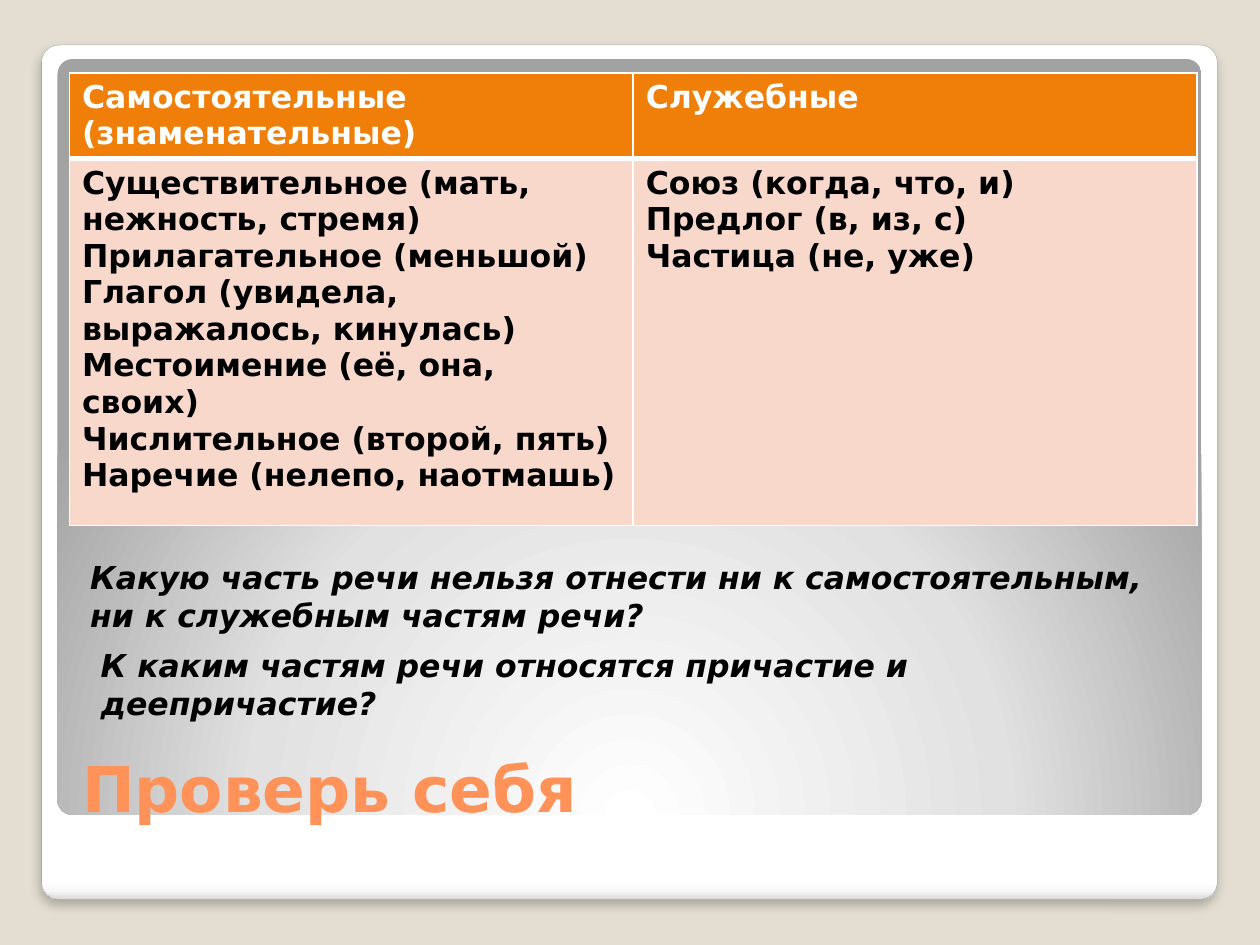
from dataclasses import dataclass

from lxml import etree
from pptx import Presentation
from pptx.dml.color import RGBColor
from pptx.enum.shapes import MSO_SHAPE
from pptx.enum.text import MSO_ANCHOR, MSO_AUTO_SIZE, PP_ALIGN
from pptx.oxml.ns import qn
from pptx.util import Cm, Pt

ROUND_RECT = MSO_SHAPE.ROUNDED_RECTANGLE
BOTTOM = MSO_ANCHOR.BOTTOM
GROW = MSO_AUTO_SIZE.SHAPE_TO_FIT_TEXT
LEFT = PP_ALIGN.LEFT
TITLE_ONLY = 5


@dataclass(frozen=True)
class Theme:
    font: str = "DejaVu Sans"
    background: str = "E3DED1"
    frame_line: str = "A4A4A4"
    shadow: str = "000000"
    title: str = "FF9258"
    text: str = "000000"
    header_text: str = "FFFFFF"
    header_fill: str = "F07F09"
    body_fill: str = "F9D8CC"
    border: str = "FFFFFF"
    title_size: int = 36
    text_size: int = 18
    thin: int = 1
    thick: int = 3


@dataclass(frozen=True)
class Box:
    left: float
    top: float
    width: float
    height: float

    def lengths(self) -> tuple:
        return Cm(self.left), Cm(self.top), Cm(self.width), Cm(self.height)


@dataclass(frozen=True)
class Panel:
    box: Box
    stops: tuple
    radial: bool = False


@dataclass(frozen=True)
class Question:
    box: Box
    text: str


@dataclass(frozen=True)
class Column:
    heading: str
    entries: tuple


THEME = Theme()
FRAME = Panel(
    Box(0.84, 0.91, 23.7, 17.22),
    ((0, "FFFFFF"), (98, "FFFFFF"), (99, "F7F7F7"), (100, "DADADA")),
)
INNER = Panel(
    Box(1.16, 1.19, 23.06, 15.24),
    ((0, "FFFFFF"), (55, "E1E1E1"), (100, "A2A2A2")),
    radial=True,
)
TITLE_BOX = Box(1.4, 13.84, 22.73, 2.92)
TABLE_BOX = Box(1.4, 1.47, 22.73, 8.84)
ROW_HEIGHTS = (1.45, 7.39)
COLUMNS = (
    Column("Самостоятельные (знаменательные)", (
        "Существительное (мать, нежность, стремя)",
        "Прилагательное (меньшой)",
        "Глагол (увидела, выражалось, кинулась)",
        "Местоимение (её, она, своих)",
        "Числительное (второй, пять)",
        "Наречие (нелепо, наотмашь)",
    )),
    Column("Служебные", (
        "Союз (когда, что, и)",
        "Предлог (в, из, с)",
        "Частица (не, уже)",
    )),
)
QUESTIONS = (
    Question(Box(1.57, 11.13, 22.23, 1.8),
             "Какую часть речи нельзя отнести ни к самостоятельным, "
             "ни к служебным частям речи?"),
    Question(Box(1.78, 12.9, 21.44, 1.8),
             "К каким частям речи относятся причастие и деепричастие?"),
)


def add_node(parent, tag: str, **attrs):
    values = {name: str(value) for name, value in attrs.items()}
    return etree.SubElement(parent, qn(tag), values)


def format_text(tf, size: int, color: str, italic: bool = False) -> None:
    for p in tf.paragraphs:
        p.alignment = LEFT
        for r in p.runs:
            r.font.name = THEME.font
            r.font.size = Pt(size)
            r.font.bold = True
            r.font.italic = italic
            r.font.color.rgb = RGBColor.from_string(color)


def set_gradient(sp, panel: Panel) -> None:
    sp.fill.background()
    props = sp.element.spPr
    grad = etree.Element(qn("a:gradFill"), {"rotWithShape": "1"})
    stops = add_node(grad, "a:gsLst")
    for position, color in panel.stops:
        stop = add_node(stops, "a:gs", pos=position * 1000)
        add_node(stop, "a:srgbClr", val=color)
    if panel.radial:
        shade = add_node(grad, "a:path", path="circle")
        add_node(shade, "a:fillToRect", l=50000, t=175000, r=50000, b=-75000)
    else:
        add_node(grad, "a:lin", ang=5400000, scaled=0)
    props.replace(props.find(qn("a:noFill")), grad)


def add_panel(s, panel: Panel):
    sp = s.shapes.add_shape(ROUND_RECT, *panel.box.lengths())
    sp.adjustments[0] = 0.02
    sp.shadow.inherit = False
    sp.line.fill.background()
    set_gradient(sp, panel)
    return sp


def outline_frame(sp) -> None:
    sp.line.color.rgb = RGBColor.from_string(THEME.frame_line)
    sp.line.width = Pt(0.16)
    effects = sp.element.spPr.find(qn("a:effectLst"))
    shadow = add_node(effects, "a:outerShdw", blurRad=Pt(6), dist=Pt(4),
                      dir=5400000, algn="t", rotWithShape=0)
    color = add_node(shadow, "a:srgbClr", val=THEME.shadow)
    add_node(color, "a:alpha", val=25000)


def set_borders(cell, top: int, bottom: int) -> None:
    props = cell._tc.get_or_add_tcPr()
    widths = {"L": THEME.thin, "R": THEME.thin, "T": top, "B": bottom}
    for index, (side, width) in enumerate(widths.items()):
        line = etree.Element(qn(f"a:ln{side}"), {"w": str(Pt(width))})
        fill = add_node(line, "a:solidFill")
        add_node(fill, "a:srgbClr", val=THEME.border)
        props.insert(index, line)


def fill_cell(cell, text: str, color: str, fill: str, top: int, bottom: int) -> None:
    cell.text_frame.text = text
    format_text(cell.text_frame, THEME.text_size, color)
    cell.fill.solid()
    cell.fill.fore_color.rgb = RGBColor.from_string(fill)
    set_borders(cell, top, bottom)


def add_parts_table(s) -> None:
    table = s.shapes.add_table(
        len(ROW_HEIGHTS), len(COLUMNS), *TABLE_BOX.lengths()).table
    for row, height in zip(table.rows, ROW_HEIGHTS):
        row.height = Cm(height)
    for index, column in enumerate(COLUMNS):
        table.columns[index].width = Cm(TABLE_BOX.width / len(COLUMNS))
        fill_cell(table.cell(0, index), column.heading, THEME.header_text,
                  THEME.header_fill, THEME.thin, THEME.thick)
        fill_cell(table.cell(1, index), "\n".join(column.entries), THEME.text,
                  THEME.body_fill, THEME.thick, THEME.thin)


def add_question(s, question: Question) -> None:
    tf = s.shapes.add_textbox(*question.box.lengths()).text_frame
    tf.word_wrap = True
    tf.auto_size = GROW
    tf.text = question.text
    format_text(tf, THEME.text_size, THEME.text, italic=True)


def place_title(s, text: str) -> None:
    title = s.shapes.title
    title.left, title.top, title.width, title.height = TITLE_BOX.lengths()
    title.element.getparent().append(title.element)
    tf = title.text_frame
    tf.text = text
    tf.vertical_anchor = BOTTOM
    format_text(tf, THEME.title_size, THEME.title)


def main() -> None:
    prs = Presentation()
    prs.slide_width, prs.slide_height = Cm(25.4), Cm(19.05)
    s = prs.slides.add_slide(prs.slide_layouts[TITLE_ONLY])
    s.background.fill.solid()
    s.background.fill.fore_color.rgb = RGBColor.from_string(THEME.background)
    outline_frame(add_panel(s, FRAME))
    add_panel(s, INNER)
    place_title(s, "Проверь себя")
    add_parts_table(s)
    for question in QUESTIONS:
        add_question(s, question)
    prs.save("out.pptx")


if __name__ == "__main__":
    main()
